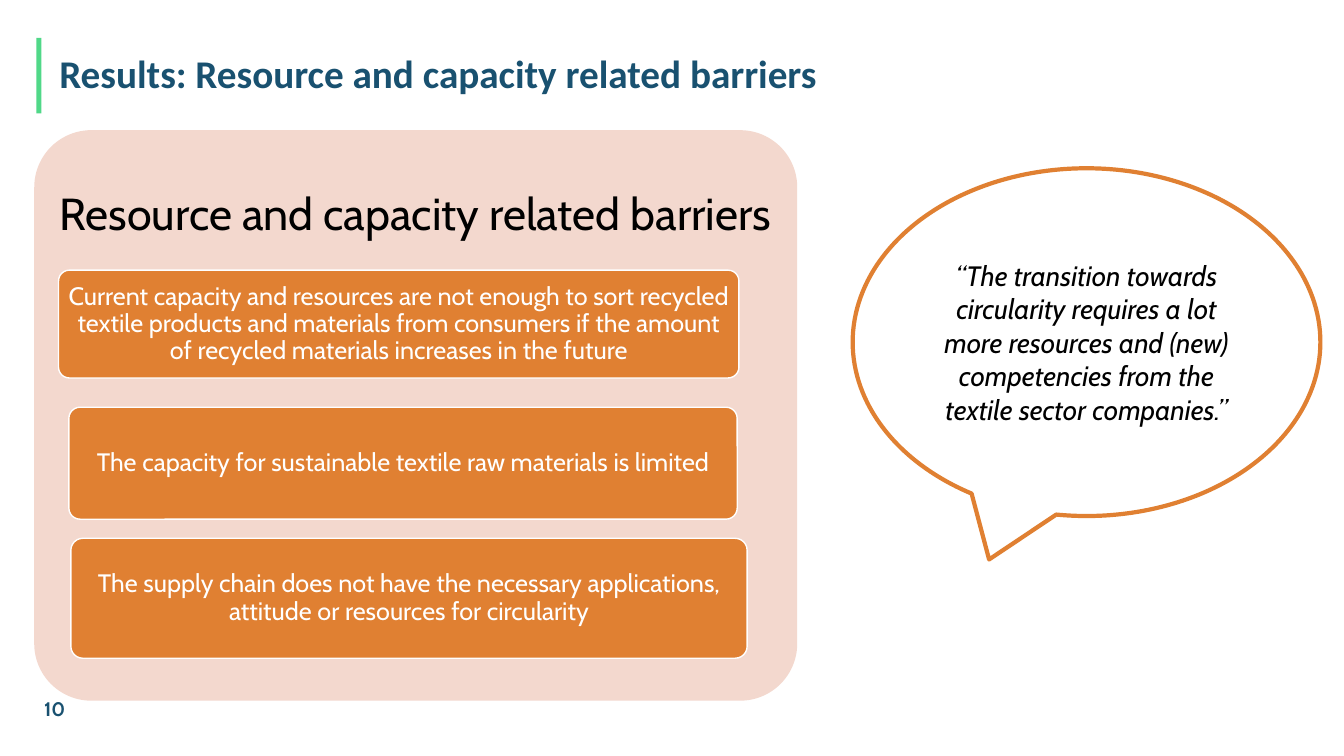
from pptx import Presentation
from pptx.dml.color import RGBColor
from pptx.enum import shapes, text
from pptx.util import Pt

TITLE = "Results: Resource and capacity related barriers"
PAGE_NUMBER = "10"
HEADING = "Resource and capacity related barriers"
# Barrier text with left, top, width, height of its card
BARRIERS = [
    ("Current capacity and resources are not enough to sort recycled textile products "
     "and materials from consumers if the amount of recycled materials increases in the future",
     (41.8, 193, 486, 77)),
    ("The capacity for sustainable textile raw materials is limited",
     (49.2, 290.9, 477.4, 80)),
    ("The supply chain does not have the necessary applications, "
     "attitude or resources for circularity",
     (50.6, 384.5, 483.1, 85.7)),
]
QUOTE = ("“The transition towards circularity requires a lot more resources and (new) "
         "competencies from the textile sector companies.”")

NAVY, GREEN, ORANGE, BLUSH = "195170", "50D888", "E08032", "F3D8CE"
WHITE, BLACK = "FFFFFF", "000000"
PANEL_LEFT, PANEL_TOP, PANEL_WIDTH, PANEL_HEIGHT = 24.5, 93, 545, 407.5
HEADING_SHARE = 0.3

deck = Presentation()
deck.slide_width, deck.slide_height = Pt(960), Pt(540)
slide = deck.slides.add_slide(deck.slide_layouts[6])


def color(value):
    return RGBColor.from_string(value)


def write(holder, words, size, ink, font="Cabin", bold=False, italic=False,
          align=text.PP_ALIGN.CENTER, spacing=1, insets=(7.2, 3.6)):
    """Fill a shape or text box; insets are horizontal and vertical."""
    frame = holder.text_frame
    frame.word_wrap = True
    frame.vertical_anchor = text.MSO_ANCHOR.MIDDLE
    frame.margin_left = frame.margin_right = Pt(insets[0])
    frame.margin_top = frame.margin_bottom = Pt(insets[1])
    paragraph = frame.paragraphs[0]
    paragraph.alignment = align
    paragraph.line_spacing = spacing
    run = paragraph.add_run()
    run.text = words
    run.font.name, run.font.size = font, Pt(size)
    run.font.bold, run.font.italic = bold, italic
    run.font.color.rgb = color(ink)


def add_box(box):
    return slide.shapes.add_textbox(*map(Pt, box))


def add_figure(kind, box, fill, line=None, line_width=1):
    figure = slide.shapes.add_shape(kind, *map(Pt, box))
    figure.shadow.inherit = False
    figure.fill.solid()
    figure.fill.fore_color.rgb = color(fill)
    if line:
        figure.line.color.rgb = color(line)
        figure.line.width = Pt(line_width)
    else:
        figure.line.fill.background()
    return figure


def add_rounded(box, fill, line=None):
    rounded = add_figure(shapes.MSO_SHAPE.ROUNDED_RECTANGLE, box, fill, line)
    rounded.adjustments[0] = 0.1
    return rounded


add_figure(shapes.MSO_SHAPE.RECTANGLE, (25.9, 27, 3.7, 54), GREEN)
write(add_box((35.3, 26.6, 828, 54.7)), TITLE, 28, NAVY, font="Calibri", bold=True,
      align=text.PP_ALIGN.LEFT, spacing=0.9)
write(add_box((24.5, 491.8, 216, 28.8)), PAGE_NUMBER, 14, NAVY, bold=True,
      align=text.PP_ALIGN.LEFT)

add_rounded((PANEL_LEFT, PANEL_TOP, PANEL_WIDTH, PANEL_HEIGHT), BLUSH)
write(add_box((PANEL_LEFT, PANEL_TOP, PANEL_WIDTH, PANEL_HEIGHT * HEADING_SHARE)),
      HEADING, 32, BLACK, spacing=0.9, insets=(9.4, 9.4))
for barrier, box in BARRIERS:
    write(add_rounded(box, ORANGE, WHITE), barrier, 18, WHITE, spacing=0.9,
          insets=(3.6, 2.8))

callout = add_figure(shapes.MSO_SHAPE.OVAL_CALLOUT, (609.1, 120.2, 334.1, 248.4),
                     WHITE, ORANGE, 3)
write(callout, QUOTE, 20, BLACK, italic=True)

deck.save("out.pptx")
